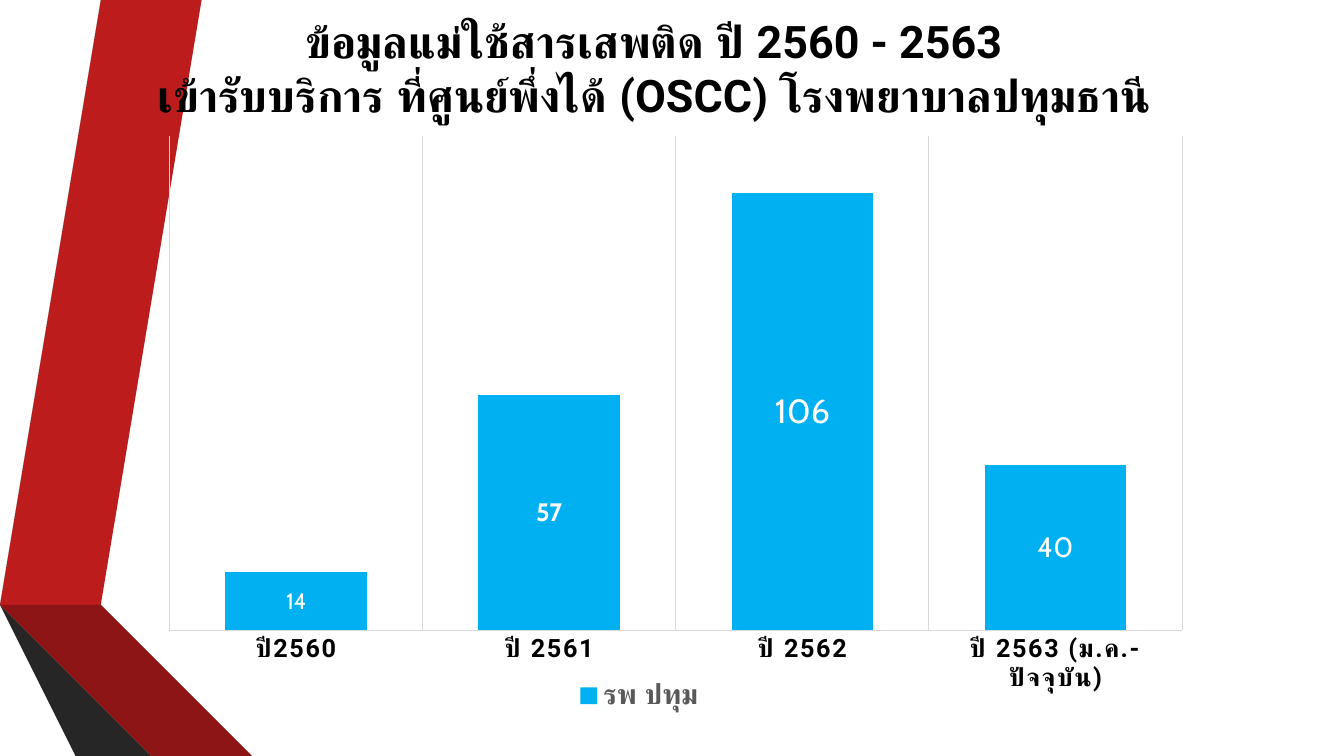
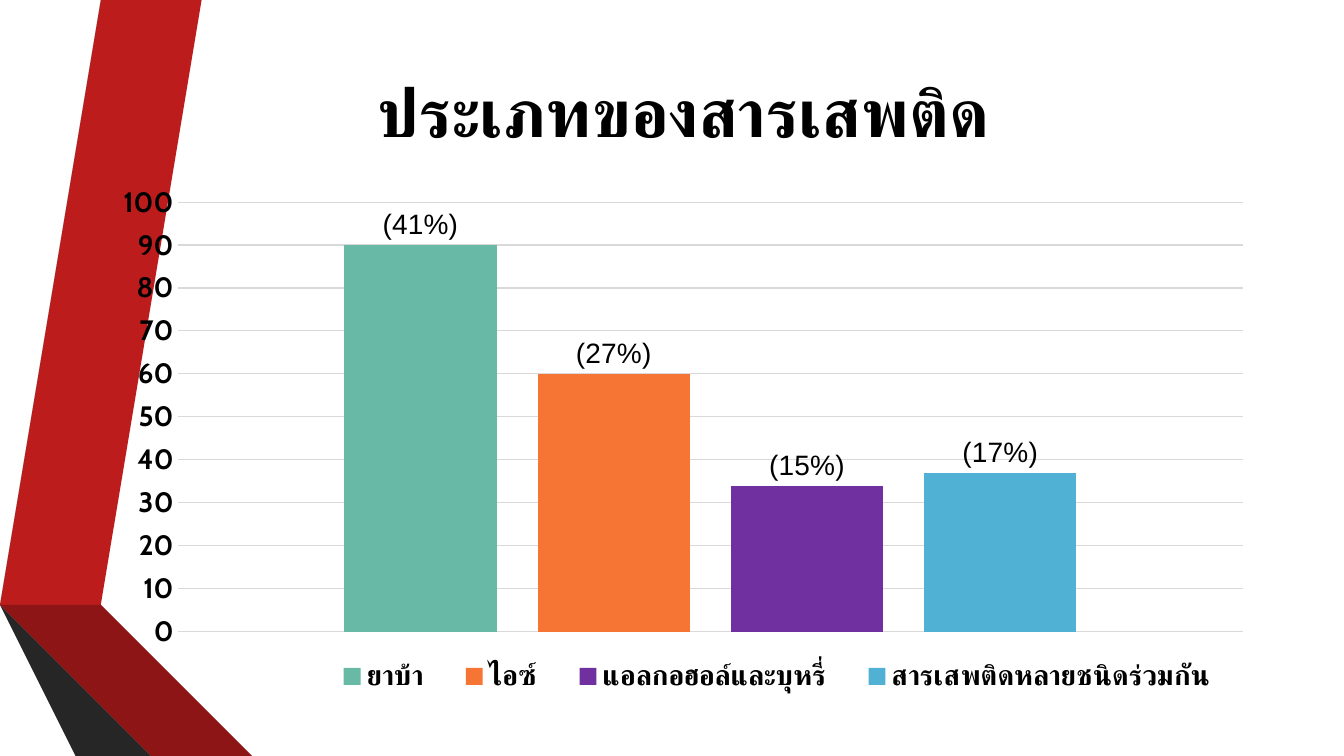
from lxml import etree
from pptx import Presentation
from pptx.chart.data import CategoryChartData
from pptx.dml.color import RGBColor
from pptx.enum.chart import XL_CHART_TYPE, XL_LABEL_POSITION, XL_LEGEND_POSITION, XL_TICK_MARK
from pptx.enum.text import PP_ALIGN
from pptx.oxml.ns import qn
from pptx.util import Inches, Pt

STACKED, CLUSTERED = XL_CHART_TYPE.COLUMN_STACKED, XL_CHART_TYPE.COLUMN_CLUSTERED
CENTER, OUTSIDE = XL_LABEL_POSITION.CENTER, XL_LABEL_POSITION.OUTSIDE_END
LEGEND_BOTTOM = XL_LEGEND_POSITION.BOTTOM
NO_TICK = XL_TICK_MARK.NONE
ALIGN_CENTER = PP_ALIGN.CENTER

WIDTH, HEIGHT = 13.33, 7.5
TITLE_ONLY, BLANK = 5, 6
BLACK, WHITE, GRAY, GRID = "000000", "FFFFFF", "595959", "D9D9D9"

BANDS = [
    ("BC1C1C", [(0.5, 5.78), (0.77, 5.83), (1.73, 0), (1.45, 0)]),
    (GRAY, [(1.39, 0), (1.11, 0), (0.16, 5.73), (0.44, 5.77)]),
    ("262626", [(0.16, 5.73), (1.45, HEIGHT), (1.51, HEIGHT)]),
    ("5E0E0E", [(0.5, 5.79), (2.08, HEIGHT), (2.14, HEIGHT)]),
    ("8D1515", [(0.5, 5.78), (2.14, HEIGHT), (2.83, HEIGHT), (0.77, 5.83)]),
    ("404040", [(2.02, HEIGHT), (0.48, 5.83), (0.44, 5.77), (0.16, 5.73), (1.51, HEIGHT)]),
]

TITLE_LINES = [
    "ข้อมูลแม่ใช้สารเสพติด ปี 2560 - 2563",
    "เข้ารับบริการ ที่ศูนย์พึ่งได้ (OSCC) โรงพยาบาลปทุมธานี",
]
YEARS = ["ปี2560", "ปี 2561", "ปี 2562", "ปี 2563 (ม.ค.- ปัจจุบัน)"]
MOTHERS = [("รพ ปทุม", [14, 57, 106, 40], "00B0F0")]
MOTHER_LABELS = [(16, False), (18, True), (24, False), (20, False)]

SUBSTANCE_TITLE = "ประเภทของสารเสพติด"
SUBSTANCES = [
    ("ยาบ้า", [90], "68B9A6"),
    ("ไอซ์", [60], "F67534"),
    ("แอลกอฮอล์และบุหรี่", [34], "7030A0"),
    ("สารเสพติดหลายชนิดร่วมกัน", [37], "50B1D4"),
]
SHARES = ["(41%)", "(27%)", "(15%)", "(17%)"]


def color(value):
    return RGBColor.from_string(value)


def style(font, name, size, value, bold=False):
    font.name, font.size, font.bold = name, Pt(size), bold
    font.color.rgb = color(value)


def add_bands(slide, master):
    tree = master.element.cSld.spTree
    for number, (fill, points) in enumerate(BANDS):
        builder = slide.shapes.build_freeform(*points[0], scale=Inches(1))
        builder.add_line_segments(points[1:], close=True)
        shape = builder.convert_to_shape()
        shape.shadow.inherit = False
        shape.fill.solid()
        shape.fill.fore_color.rgb = color(fill)
        shape.line.fill.background()
        shape.element.nvSpPr.cNvPr.set("id", str(100 + number))
        tree.append(shape.element)


def set_layout(element, index, box, inner=False):
    for old in element.findall(qn("c:layout")):
        element.remove(old)
    layout = etree.Element(qn("c:layout"))
    manual = etree.SubElement(layout, qn("c:manualLayout"))
    settings = [("layoutTarget", "inner")] if inner else []
    settings += [("xMode", "edge"), ("yMode", "edge")] + list(zip("xywh", box))
    for tag, value in settings:
        etree.SubElement(manual, qn("c:" + tag)).set("val", str(value))
    element.insert(index, layout)


def add_chart(slide, kind, box, categories, series_list, gap, overlap, maximum, plot_box):
    data = CategoryChartData()
    data.categories = categories
    for name, values, _ in series_list:
        data.add_series(name, values)
    chart = slide.shapes.add_chart(kind, *map(Inches, box), data).chart
    style(chart.font, "Cabin", 20, BLACK)
    chart.has_title = False
    chart.has_legend = True
    chart.legend.position = LEGEND_BOTTOM
    chart.legend.include_in_layout = False
    plot = chart.plots[0]
    plot.gap_width, plot.overlap, plot.vary_by_categories = gap, overlap, False
    for series, (_, _, fill) in zip(plot.series, series_list):
        series.format.fill.solid()
        series.format.fill.fore_color.rgb = color(fill)
        series.invert_if_negative = False
    for axis in (chart.category_axis, chart.value_axis):
        axis.major_tick_mark = axis.minor_tick_mark = NO_TICK
    chart.value_axis.minimum_scale, chart.value_axis.maximum_scale = 0, maximum
    set_layout(chart.element.xpath("c:chart/c:plotArea")[0], 0, plot_box, inner=True)
    return chart


def show_gridlines(axis, other_axis):
    axis.has_major_gridlines = True
    other_axis.has_major_gridlines = False
    other_axis.visible = False
    set_line(axis.major_gridlines.format.line)


def set_line(line):
    line.color.rgb = color(GRID)
    line.width = Pt(0.75)


def build_mothers(slide):
    title = slide.shapes.title
    title.left, title.top, title.width, title.height = map(Inches, (0.81, 0.08, 11.35, 1.18))
    title.text_frame.text = "\n".join(TITLE_LINES)
    title.text_frame.word_wrap = False
    for paragraph in title.text_frame.paragraphs:
        paragraph.alignment = ALIGN_CENTER
        style(paragraph.runs[0].font, "Roboto", 32, BLACK, True)
    chart = add_chart(slide, STACKED, (0.96, 1.26, 10.77, 5.84), YEARS, MOTHERS,
                      79, 100, 120, (0.067, 0.015, 0.933, 0.84))
    axis = chart.category_axis
    show_gridlines(axis, chart.value_axis)
    set_line(axis.format.line)
    style(axis.tick_labels.font, "Roboto", 18, BLACK, True)
    for properties in chart.element.xpath("c:chart/c:plotArea/c:catAx//a:defRPr"):
        properties.set("spc", "120")
    style(chart.legend.font, "Arial", 20, GRAY, True)
    for index, (size, bold) in enumerate(MOTHER_LABELS):
        label = chart.plots[0].series[0].points[index].data_label
        style(label.font, "Cabin", size, WHITE, bold)
        label.position = CENTER


def build_substances(slide):
    chart = add_chart(slide, CLUSTERED, (1, 0.45, 11.56, 6.59), ["1"], SUBSTANCES,
                      219, -27, 100, (0.066, 0.236, 0.914, 0.647))
    chart.has_title = True
    chart.chart_title.text_frame.text = SUBSTANCE_TITLE
    style(chart.chart_title.text_frame.paragraphs[0].runs[0].font, "Arial", 48, BLACK, True)
    axis = chart.value_axis
    show_gridlines(axis, chart.category_axis)
    axis.major_unit = 10
    axis.format.line.fill.background()
    style(axis.tick_labels.font, "Cabin", 20, BLACK, True)
    style(chart.legend.font, "Roboto", 20, BLACK, True)
    set_layout(chart.element.xpath("c:chart/c:legend")[0], 1, (0.18, 0.91, 0.8, 0.08))
    for series, share in zip(chart.plots[0].series, SHARES):
        label = series.points[0].data_label
        label.text_frame.text = share
        style(label.text_frame.paragraphs[0].runs[0].font, "Arial", 20, BLACK)
        label.position = OUTSIDE


def main():
    presentation = Presentation()
    presentation.slide_width, presentation.slide_height = Inches(WIDTH), Inches(HEIGHT)
    layouts = presentation.slide_layouts
    mothers = presentation.slides.add_slide(layouts[TITLE_ONLY])
    add_bands(mothers, presentation.slide_master)
    build_mothers(mothers)
    build_substances(presentation.slides.add_slide(layouts[BLANK]))
    presentation.save("out.pptx")


if __name__ == "__main__":
    main()
